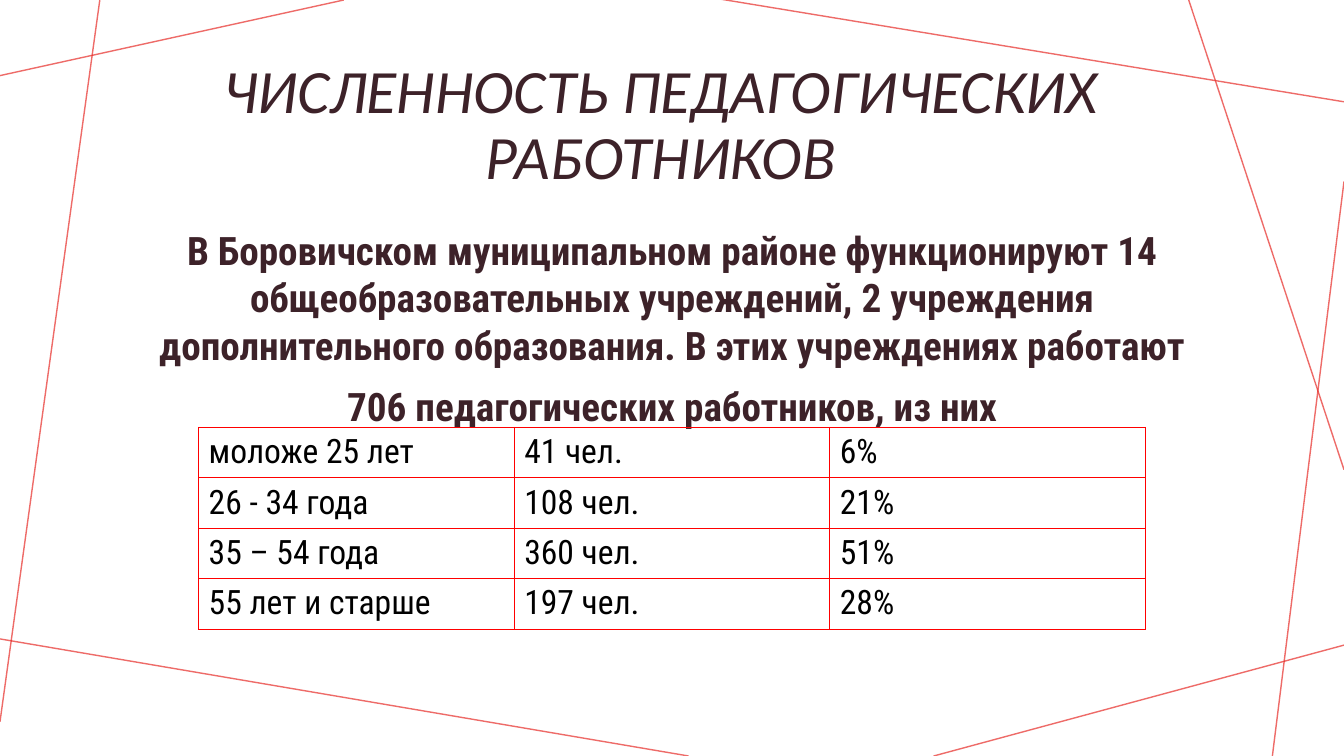
from lxml.etree import SubElement
from pptx import Presentation
from pptx.dml.color import RGBColor
from pptx.enum.shapes import MSO_CONNECTOR
from pptx.enum.text import MSO_ANCHOR, PP_ALIGN
from pptx.oxml import parse_xml
from pptx.oxml.ns import nsdecls, qn
from pptx.util import Inches, Pt

TITLE = "ЧИСЛЕННОСТЬ ПЕДАГОГИЧЕСКИХ РАБОТНИКОВ"
INTRO = [
    "В Боровичском муниципальном районе функционируют 14 общеобразовательных "
    "учреждений, 2 учреждения дополнительного образования. "
    "В этих учреждениях работают",
    "706 педагогических работников, из них",
]
AGE_GROUPS = [
    ("моложе 25 лет", "41 чел.", "6%"),
    ("26 - 34 года", "108 чел.", "21%"),
    ("35 – 54 года", "360 чел.", "51%"),
    ("55 лет и старше", "197 чел.", "28%"),
]
# Start x, start y, end x, end y
RAYS = [
    (3.41, 0, 0, 0.75),
    (0.99, 0, 0, 7.16),
    (6.83, 7.5, -0.05, 6.33),
    (13.33, 6.4, 9.26, 7.5),
    (13.33, 1.8, 12.62, 7.5),
    (13.33, 4.66, 11.79, 0),
    (13.33, 1.01, 7.14, -0.01),
]
COLORS = {"ray": "E72D29", "heading": "3D2229", "cell": "000000", "border": "FF0000"}
RAY_OPACITY = 70
BODY_FONT = "Roboto Condensed"
TABLE_LEFT, TABLE_TOP = 1.97, 4.24
COLUMN_WIDTH, ROW_HEIGHT = 3.13, 0.45


def write(frame, paragraphs, font, size, color, bold=False, italic=False,
          align=PP_ALIGN.LEFT, anchor=MSO_ANCHOR.TOP, line_spacing=None, before=0):
    frame.word_wrap = True
    frame.vertical_anchor = anchor
    for i, text in enumerate(paragraphs):
        paragraph = frame.add_paragraph() if i else frame.paragraphs[0]
        paragraph.alignment = align
        paragraph.space_before = Pt(before)
        if line_spacing:
            paragraph.line_spacing = line_spacing
        run = paragraph.add_run()
        run.text = text
        run.font.name = font
        run.font.size = Pt(size)
        run.font.bold = bold
        run.font.italic = italic
        run.font.color.rgb = RGBColor.from_string(COLORS[color])


def add_ray(slide, ends):
    ray = slide.shapes.add_connector(MSO_CONNECTOR.STRAIGHT, *map(Inches, ends))
    ray.line.width = Pt(1)
    ray.line.color.rgb = RGBColor.from_string(COLORS["ray"])
    properties = ray._element.spPr
    color = properties.find(".//" + qn("a:srgbClr"))
    SubElement(color, qn("a:alpha"), val=str(RAY_OPACITY * 1000))
    SubElement(properties, qn("a:effectLst"))


def add_borders(cell):
    properties = cell._tc.get_or_add_tcPr()
    for i, side in enumerate(("lnL", "lnR", "lnT", "lnB")):
        properties.insert(i, parse_xml(
            f'<a:{side} {nsdecls("a")} w="{Pt(1)}"><a:solidFill>'
            f'<a:srgbClr val="{COLORS["border"]}"/></a:solidFill></a:{side}>'))


def add_age_table(slide):
    row_count, column_count = len(AGE_GROUPS), len(AGE_GROUPS[0])
    table = slide.shapes.add_table(
        row_count, column_count, Inches(TABLE_LEFT), Inches(TABLE_TOP),
        Inches(COLUMN_WIDTH * column_count), Inches(ROW_HEIGHT * row_count)).table
    table.first_row = False
    table.horz_banding = False
    for row, values in enumerate(AGE_GROUPS):
        for column, value in enumerate(values):
            cell = table.cell(row, column)
            cell.fill.background()
            add_borders(cell)
            write(cell.text_frame, [value], BODY_FONT, 24, "cell")


def main():
    presentation = Presentation()
    presentation.slide_width = Inches(13.33)
    presentation.slide_height = Inches(7.5)
    slide = presentation.slides.add_slide(presentation.slide_layouts[6])

    for ends in RAYS:
        add_ray(slide, ends)

    title = slide.shapes.add_textbox(*map(Inches, (1.14, 0.5, 10.83, 1.51)))
    write(title.text_frame, [TITLE], "Calibri", 44, "heading", italic=True,
          align=PP_ALIGN.CENTER, anchor=MSO_ANCHOR.MIDDLE, line_spacing=0.9)
    intro = slide.shapes.add_textbox(*map(Inches, (1.25, 2.2, 10.83, 4.4)))
    write(intro.text_frame, INTRO, BODY_FONT, 28, "heading", bold=True,
          align=PP_ALIGN.CENTER, before=10)
    add_age_table(slide)

    presentation.save("out.pptx")


if __name__ == "__main__":
    main()
